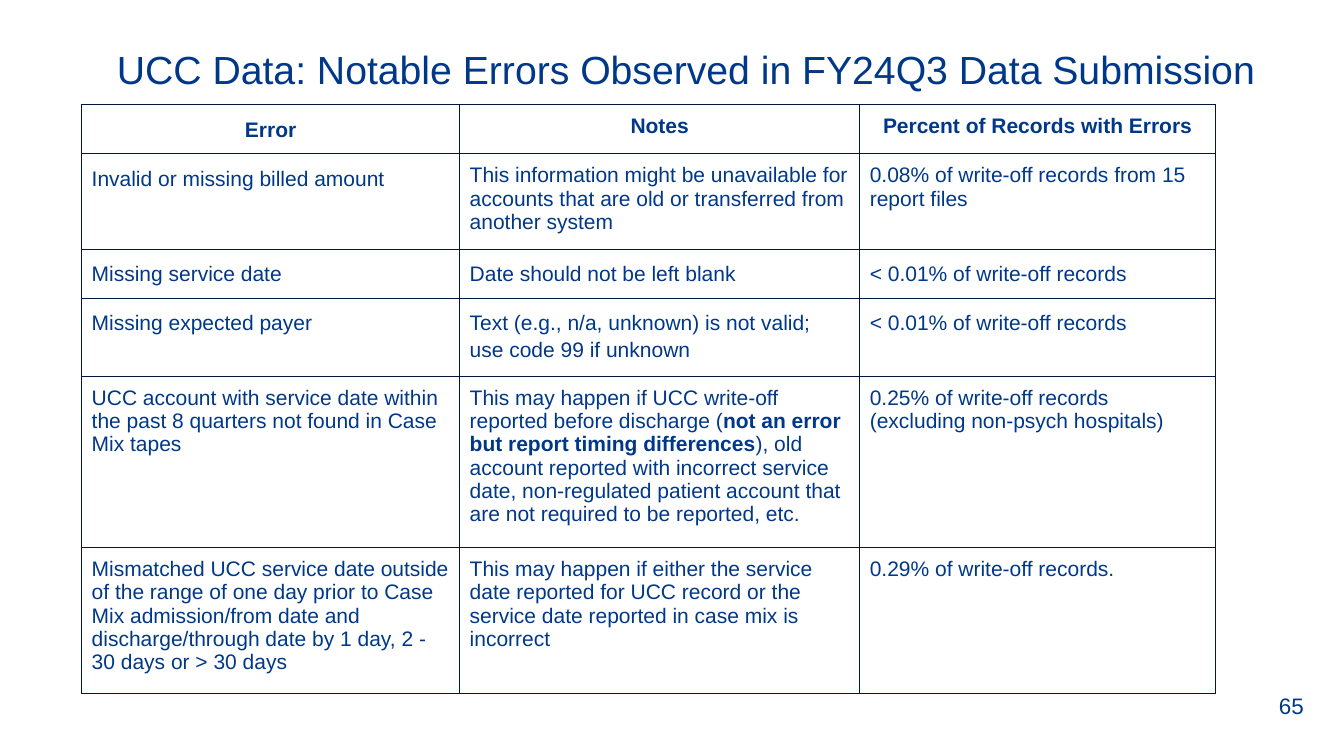
from dataclasses import dataclass
from lxml.etree import SubElement as Sub
from pptx import Presentation as Deck
from pptx.dml.color import RGBColor as RGB
from pptx.enum.text import MSO_ANCHOR as Anchor, PP_ALIGN as Align
from pptx.oxml.ns import qn
from pptx.util import Pt


@dataclass(frozen=True)
class Theme:
    font: str = "Arial"
    ink: str = "003889"
    rule: str = "001938"
    head: int = 28
    body: int = 15
    page: int = 16
    line: float = 0.75
    pad: float = 7.2
    loose: float = 1.14


class Slide:
    """Draws styled elements on one slide."""

    def __init__(self, deck, theme):
        self.theme = theme
        self.slide = deck.slides.add_slide(deck.slide_layouts[5])

    def style(self, run, size, bold=False):
        font = run.font
        font.name, font.size, font.bold = self.theme.font, Pt(size), bold
        font.color.rgb = RGB.from_string(self.theme.ink)

    def place(self, shape, box, text, size):
        shape.left, shape.top, shape.width, shape.height = map(Pt, box)
        frame = shape.text_frame
        frame.text = text
        frame.word_wrap = True
        frame.vertical_anchor = Anchor.MIDDLE
        para = frame.paragraphs[0]
        para.alignment = Align.LEFT
        self.style(para.runs[0], size)
        return para

    def title(self, text, box):
        para = self.place(self.slide.shapes.title, box, text, self.theme.head)
        para.line_spacing = 0.9

    def label(self, text, box):
        shape = self.slide.shapes.add_textbox(*map(Pt, box))
        self.place(shape, box, text, self.theme.page)

    def edge(self, cell):
        props = cell._tc.get_or_add_tcPr()
        for side in "LRTB":
            line = Sub(props, qn(f"a:ln{side}"), w=str(Pt(self.theme.line)))
            fill = Sub(line, qn("a:solidFill"))
            Sub(fill, qn("a:srgbClr"), val=self.theme.rule)
        cell.fill.background()

    def cell(self, cell, text, top, loose):
        pad = Pt(self.theme.pad)
        cell.margin_left = cell.margin_right = pad
        cell.margin_top = cell.margin_bottom = pad
        self.edge(cell)
        para = cell.text_frame.paragraphs[0]
        para.alignment = Align.CENTER if top else Align.LEFT
        para.line_spacing = self.theme.loose if loose else 1.0
        for i, part in enumerate(text.split("**")):
            run = para.add_run()
            run.text = part
            self.style(run, self.theme.body, top or i % 2 == 1)

    def table(self, rows, left, top, wides, highs, loose):
        shape = self.slide.shapes.add_table(
            len(rows), len(wides), Pt(left), Pt(top), Pt(sum(wides)), Pt(sum(highs)))
        grid = shape.table
        grid.first_row = grid.horz_banding = False
        for col, wide in zip(grid.columns, wides):
            col.width = Pt(wide)
        for r, (row, high) in enumerate(zip(rows, highs)):
            grid.rows[r].height = Pt(high)
            for c, text in enumerate(row):
                self.cell(grid.cell(r, c), text, r == 0, c in loose[r])


ROWS = [
    ("Error", "Notes", "Percent of Records with Errors"),
    ("Invalid or missing billed amount",
     "This information might be unavailable for accounts that are old or "
     "transferred from another system",
     "0.08% of write-off records from 15 report files"),
    ("Missing service date", "Date should not be left blank",
     "< 0.01% of write-off records"),
    ("Missing expected payer",
     "Text (e.g., n/a, unknown) is not valid; use code 99 if unknown",
     "< 0.01% of write-off records"),
    ("UCC account with service date within the past 8 quarters not found in "
     "Case Mix tapes",
     "This may happen if UCC write-off reported before discharge (**not an "
     "error but report timing differences**), old account reported with "
     "incorrect service date, non-regulated patient account that are not "
     "required to be reported, etc.",
     "0.25% of write-off records (excluding non-psych hospitals)"),
    ("Mismatched UCC service date outside of the range of one day prior to "
     "Case Mix admission/from date and discharge/through date by 1 day, 2 - "
     "30 days or > 30 days",
     "This may happen if either the service date reported for UCC record or "
     "the service date reported in case mix is incorrect",
     "0.29% of write-off records."),
]
WIDES = (270, 285.8, 254.2)
HIGHS = (33.5, 64.2, 33.5, 52, 114.2, 97.8)
LOOSE = ((0,), (0,), (0, 1, 2), (0, 1, 2), (), ())


def main():
    deck = Deck()
    deck.slide_width, deck.slide_height = Pt(960), Pt(540)
    page = Slide(deck, Theme())
    page.label("65", (906.5, 489.6, 45.4, 28.8))
    page.title("UCC Data: Notable Errors Observed in FY24Q3 Data Submission",
               (76.3, 27.4, 863.3, 47.5))
    page.table(ROWS, 58.3, 74.9, WIDES, HIGHS, LOOSE)
    deck.save("out.pptx")


if __name__ == "__main__":
    main()
